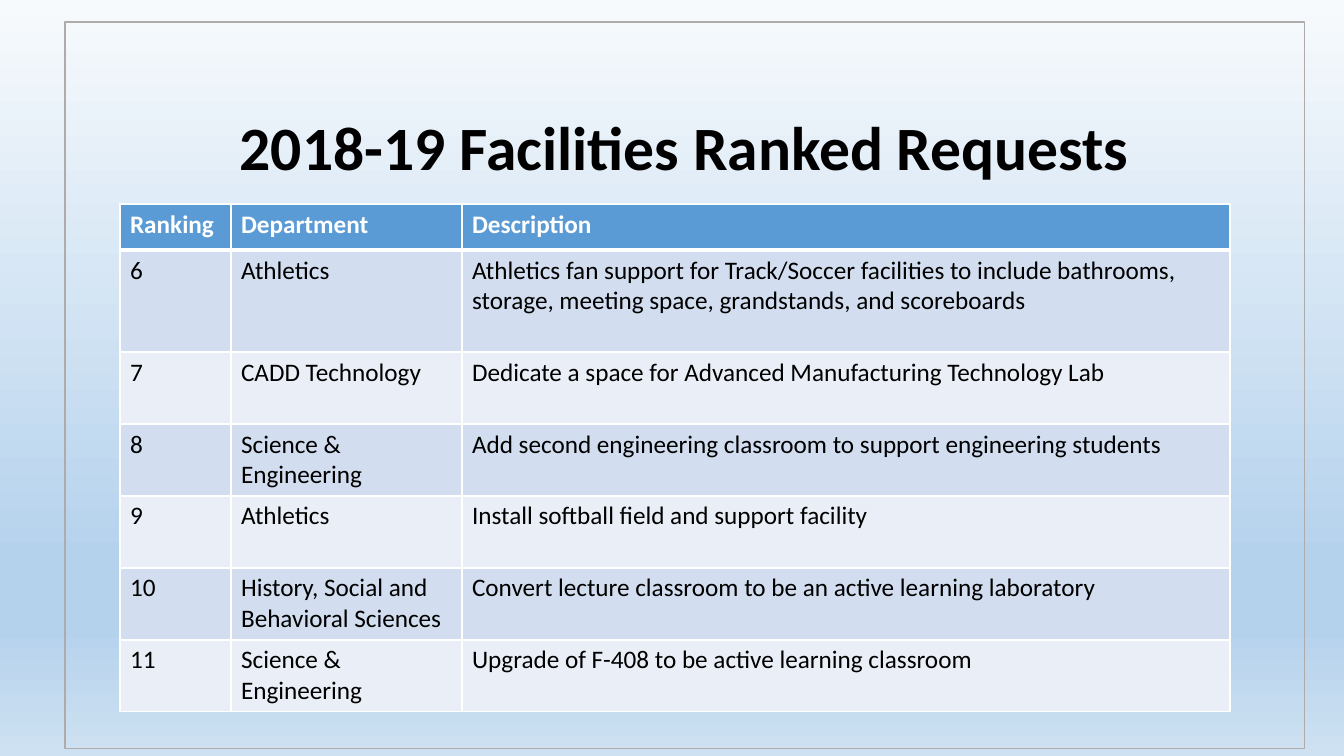
import copy

import lxml.etree
import pptx
import pptx.dml.color
import pptx.enum.text
import pptx.oxml.ns
import pptx.util

SCALE = 914400 / 100.8
FONT = "Calibri"
COLOURS = {
    "sky_top": "F7FAFD",
    "sky_deep": "B5D2EC",
    "sky_bottom": "CEE1F2",
    "frame": "AFABAB",
    "header": "5B9BD5",
    "band_dark": "D2DEEF",
    "band_light": "EAEFF7",
    "white": "FFFFFF",
    "black": "000000",
}
SKY_STOPS = [(0, "sky_top"), (0.74, "sky_deep"), (0.83, "sky_deep"), (1, "sky_bottom")]
COLUMN_WIDTHS = [111, 231, 768]
ROW_HEIGHTS = [46, 102, 72, 72, 72, 72, 71]
REQUESTS = [
    ("Ranking", "Department", "Description"),
    ("6", "Athletics", "Athletics fan support for Track/Soccer facilities to include bathrooms, "
     "storage, meeting space, grandstands, and scoreboards"),
    ("7", "CADD Technology", "Dedicate a space for Advanced Manufacturing Technology Lab"),
    ("8", "Science & Engineering", "Add second engineering classroom to support engineering students"),
    ("9", "Athletics", "Install softball field and support facility"),
    ("10", "History, Social and Behavioral Sciences",
     "Convert lecture classroom to be an active learning laboratory"),
    ("11", "Science & Engineering", "Upgrade of F-408 to be active learning classroom"),
]


def px(length):
    return pptx.util.Emu(round(length * SCALE))


def rgb(name):
    return pptx.dml.color.RGBColor.from_string(COLOURS[name])


def write_text(text_frame, text, size=18, colour="black", bold=False, align=None, spacing=None):
    para = text_frame.paragraphs[0]
    para.alignment = align
    para.line_spacing = spacing
    span = para.add_run()
    span.text = text
    span.font.name = FONT
    span.font.size = pptx.util.Pt(size)
    span.font.bold = bold
    span.font.color.rgb = rgb(colour)


def paint_background(page):
    fill = page.background.fill
    fill.gradient()
    fill.gradient_angle = 270
    stop_list = next(page.element.iter(pptx.oxml.ns.qn("a:gsLst")))
    while len(stop_list) < len(SKY_STOPS):
        stop_list.append(copy.deepcopy(stop_list[0]))
    for stop, (position, colour) in zip(fill.gradient_stops, SKY_STOPS):
        stop.position = position
        stop.color.rgb = rgb(colour)


def place_title(page, left, top, width, height):
    title = page.shapes.title
    title.left, title.top, title.width, title.height = map(px, (left, top, width, height))
    title.line.color.rgb = rgb("frame")
    title.line.width = pptx.util.Pt(0.75)
    text_frame = title.text_frame
    text_frame.auto_size = pptx.enum.text.MSO_AUTO_SIZE.NONE
    text_frame.vertical_anchor = pptx.enum.text.MSO_ANCHOR.TOP
    text_frame.margin_top = px(95)
    write_text(text_frame, "2018-19 Facilities Ranked Requests", size=44, bold=True,
               align=pptx.enum.text.PP_ALIGN.CENTER, spacing=0.9)


def add_borders(cell_properties, top, bottom):
    qn = pptx.oxml.ns.qn
    widths = {"a:lnL": 1, "a:lnR": 1, "a:lnT": top, "a:lnB": bottom}
    for index, (tag, width) in enumerate(widths.items()):
        border = lxml.etree.Element(qn(tag), w=str(pptx.util.Pt(width)))
        fill = lxml.etree.SubElement(border, qn("a:solidFill"))
        lxml.etree.SubElement(fill, qn("a:srgbClr"), val=COLOURS["white"])
        cell_properties.insert(index, border)


def place_table(page, left, top):
    frame = page.shapes.add_table(len(ROW_HEIGHTS), len(COLUMN_WIDTHS), px(left), px(top),
                                  px(sum(COLUMN_WIDTHS)), px(sum(ROW_HEIGHTS)))
    table = frame.table
    for column, width in zip(table.columns, COLUMN_WIDTHS):
        column.width = px(width)
    for index, (row, height, texts) in enumerate(zip(table.rows, ROW_HEIGHTS, REQUESTS)):
        row.height = px(height)
        is_header = index == 0
        band = "header" if is_header else ("band_light", "band_dark")[index % 2]
        for cell, text in zip(row.cells, texts):
            cell.fill.solid()
            cell.fill.fore_color.rgb = rgb(band)
            write_text(cell.text_frame, text, bold=is_header,
                       colour="white" if is_header else "black")
    for index, properties in enumerate(frame.element.iter(pptx.oxml.ns.qn("a:tcPr"))):
        row_index = index // len(COLUMN_WIDTHS)
        add_borders(properties, top=3 if row_index == 1 else 1, bottom=3 if row_index == 0 else 1)


def main():
    deck = pptx.Presentation()
    deck.slide_width, deck.slide_height = px(1344), px(756)
    page = deck.slides.add_slide(deck.slide_layouts.get_by_name("Title Only"))
    paint_background(page)
    place_title(page, 65, 22, 1240, 727)
    place_table(page, 120, 204)
    deck.save("out.pptx")


if __name__ == "__main__":
    main()
